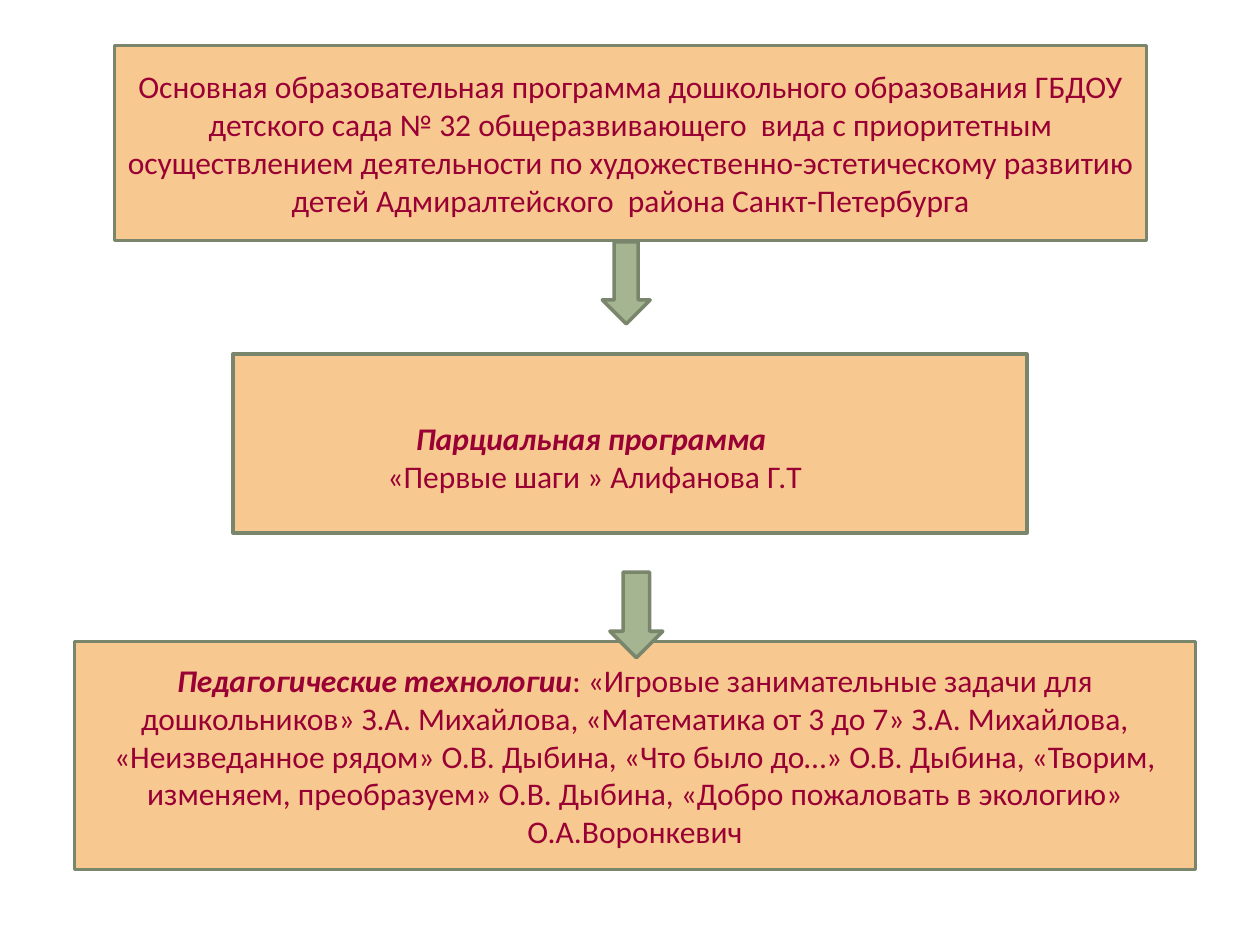
"""Build a slide showing the kindergarten's programme flow from top to bottom."""
from dataclasses import dataclass

from pptx import Presentation
from pptx.dml.color import RGBColor
from pptx.enum.shapes import MSO_SHAPE
from pptx.enum.text import MSO_ANCHOR, PP_ALIGN
from pptx.util import Inches, Pt

RECTANGLE = MSO_SHAPE.RECTANGLE
DOWN_ARROW = MSO_SHAPE.DOWN_ARROW
MIDDLE = MSO_ANCHOR.MIDDLE
CENTER = PP_ALIGN.CENTER


@dataclass(frozen=True)
class Theme:
    panel: RGBColor = RGBColor.from_string("F8C891")
    arrow: RGBColor = RGBColor.from_string("A5B592")
    outline: RGBColor = RGBColor.from_string("7A866C")
    text: RGBColor = RGBColor.from_string("990033")
    font: str = "Calibri"
    size: Pt = Pt(18)
    border: Pt = Pt(2)


THEME = Theme()

MAIN_PROGRAMME = (
    "Основная образовательная программа дошкольного образования ГБДОУ "
    "детского сада № 32 общеразвивающего  вида с приоритетным "
    "осуществлением деятельности по художественно-эстетическому развитию "
    "детей Адмиралтейского  района Санкт-Петербурга"
)
TECHNOLOGIES = (
    ": «Игровые занимательные задачи для дошкольников» З.А. Михайлова, "
    "«Математика от 3 до 7» З.А. Михайлова, «Неизведанное рядом» О.В. Дыбина, "
    "«Что было до…» О.В. Дыбина, «Творим, изменяем, преобразуем» О.В. Дыбина, "
    "«Добро пожаловать в экологию» О.А.Воронкевич"
)


def add_block(page, kind, bounds, fill):
    block = page.shapes.add_shape(kind, *map(Inches, bounds))
    block.shadow.inherit = False
    block.fill.solid()
    block.fill.fore_color.rgb = fill
    block.line.color.rgb = THEME.outline
    block.line.width = THEME.border
    return block


def write_paragraph(paragraph, spans):
    paragraph.alignment = CENTER
    paragraph.font.name = THEME.font
    paragraph.font.size = THEME.size
    paragraph.font.color.rgb = THEME.text
    for text, emphasis in spans:
        span = paragraph.add_run()
        span.text = text
        if emphasis:
            span.font.bold = True
            span.font.italic = True


deck = Presentation()
deck.slide_width = Inches(10)
deck.slide_height = Inches(7.5)
page = deck.slides.add_slide(deck.slide_layouts[6])

main_box = add_block(page, RECTANGLE, (0.91, 0.36, 8.19, 1.55), THEME.panel)
add_block(page, RECTANGLE, (1.85, 2.81, 6.3, 1.42), THEME.panel)

partial_box = page.shapes.add_textbox(*map(Inches, (0.98, 3.28, 7.48, 0.71)))
partial_box.text_frame.word_wrap = True
write_paragraph(partial_box.text_frame.paragraphs[0], [("Парциальная программа ", True)])
write_paragraph(partial_box.text_frame.add_paragraph(), [("«Первые шаги » Алифанова Г.Т", False)])

technology_box = add_block(page, RECTANGLE, (0.59, 5.09, 8.9, 1.81), THEME.panel)

for box, spans in (
    (main_box, [(MAIN_PROGRAMME, False)]),
    (technology_box, [("Педагогические технологии", True), (TECHNOLOGIES, False)]),
):
    box.text_frame.word_wrap = True
    box.text_frame.vertical_anchor = MIDDLE
    write_paragraph(box.text_frame.paragraphs[0], spans)

for bounds in ((4.78, 1.92, 0.38, 0.65), (4.84, 4.54, 0.42, 0.68)):
    add_block(page, DOWN_ARROW, bounds, THEME.arrow)

deck.save("out.pptx")
